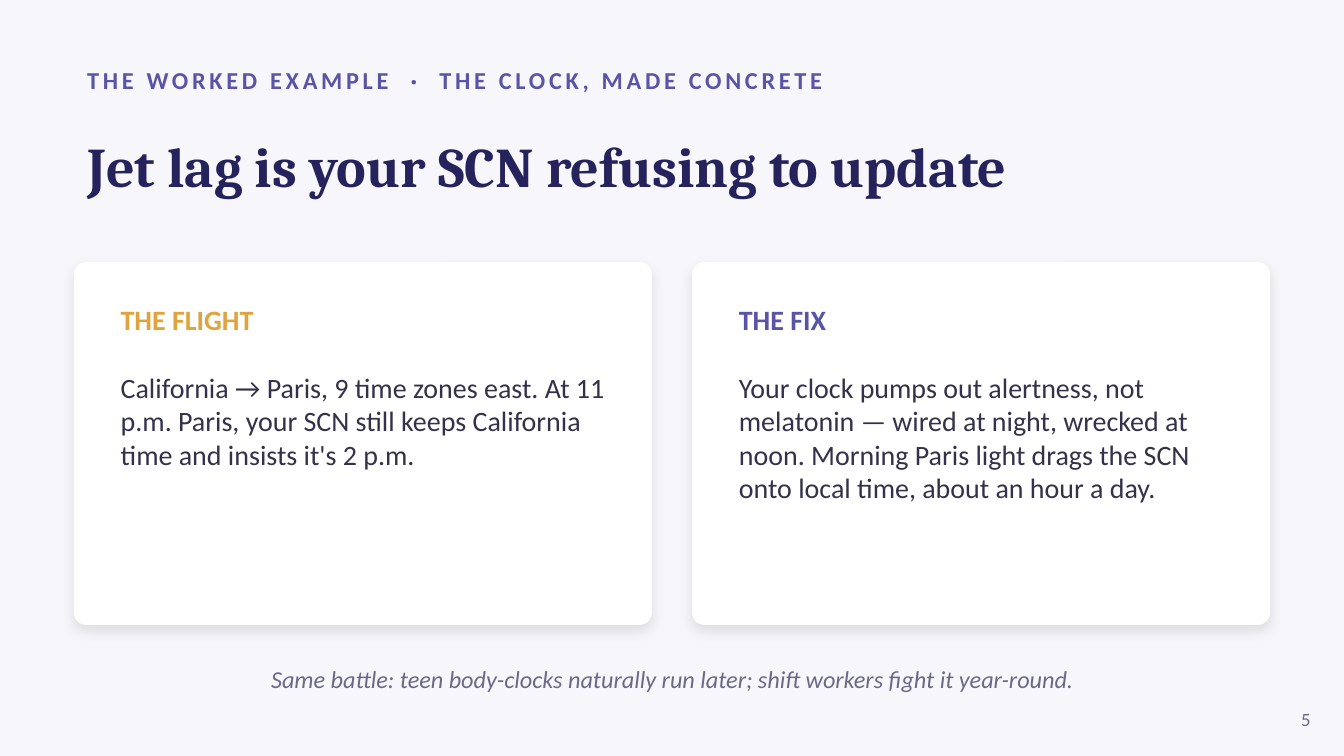
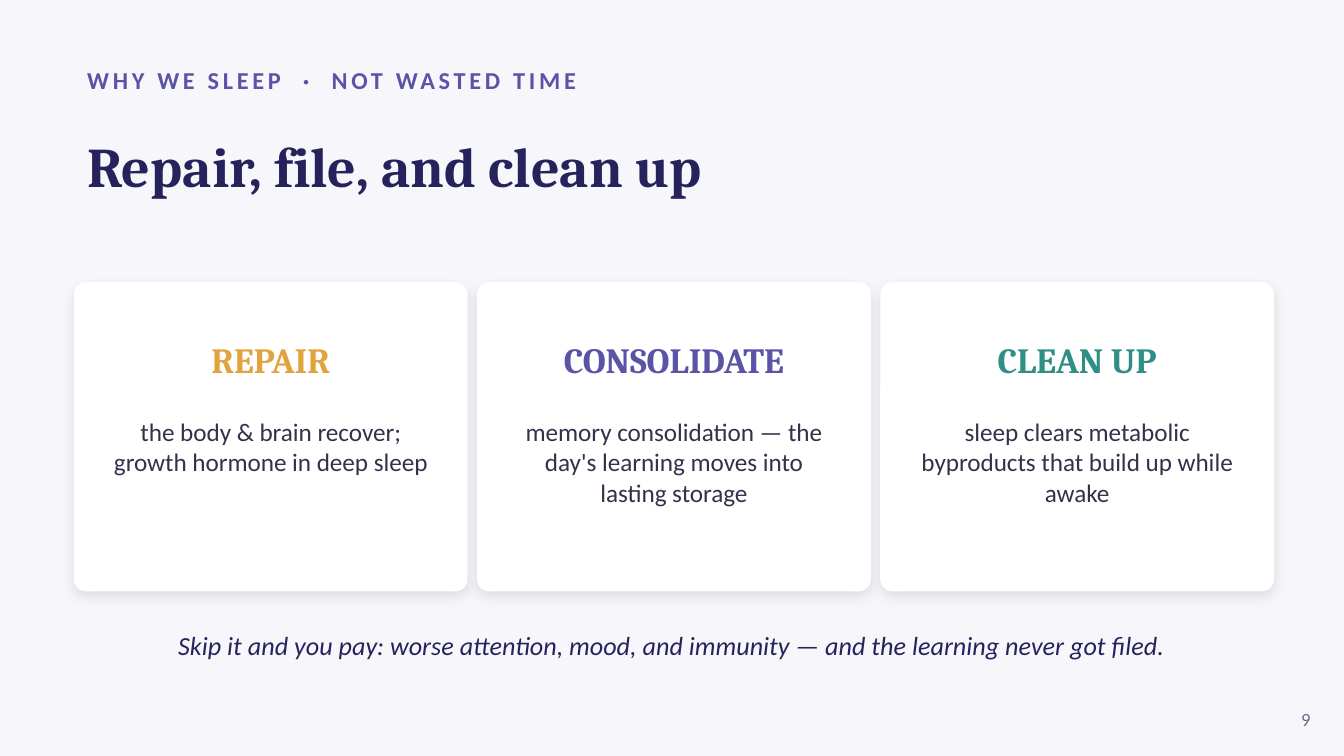
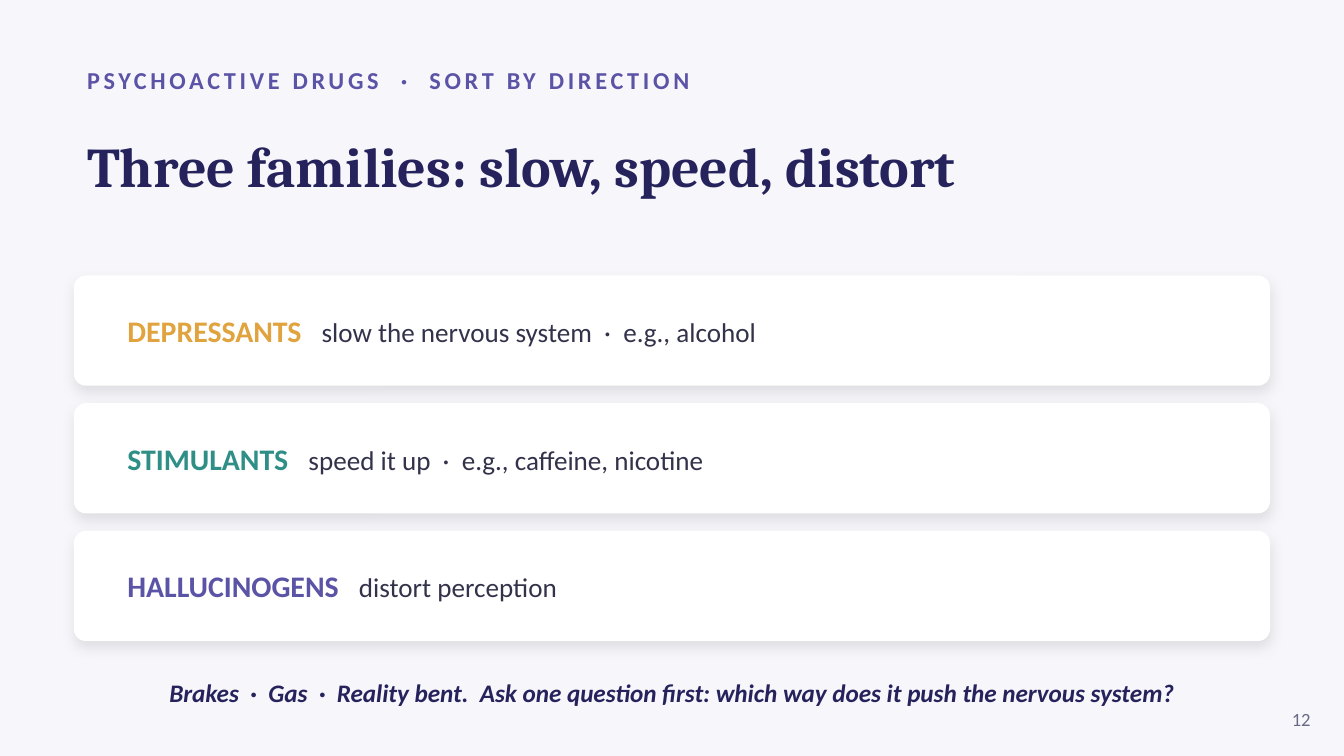
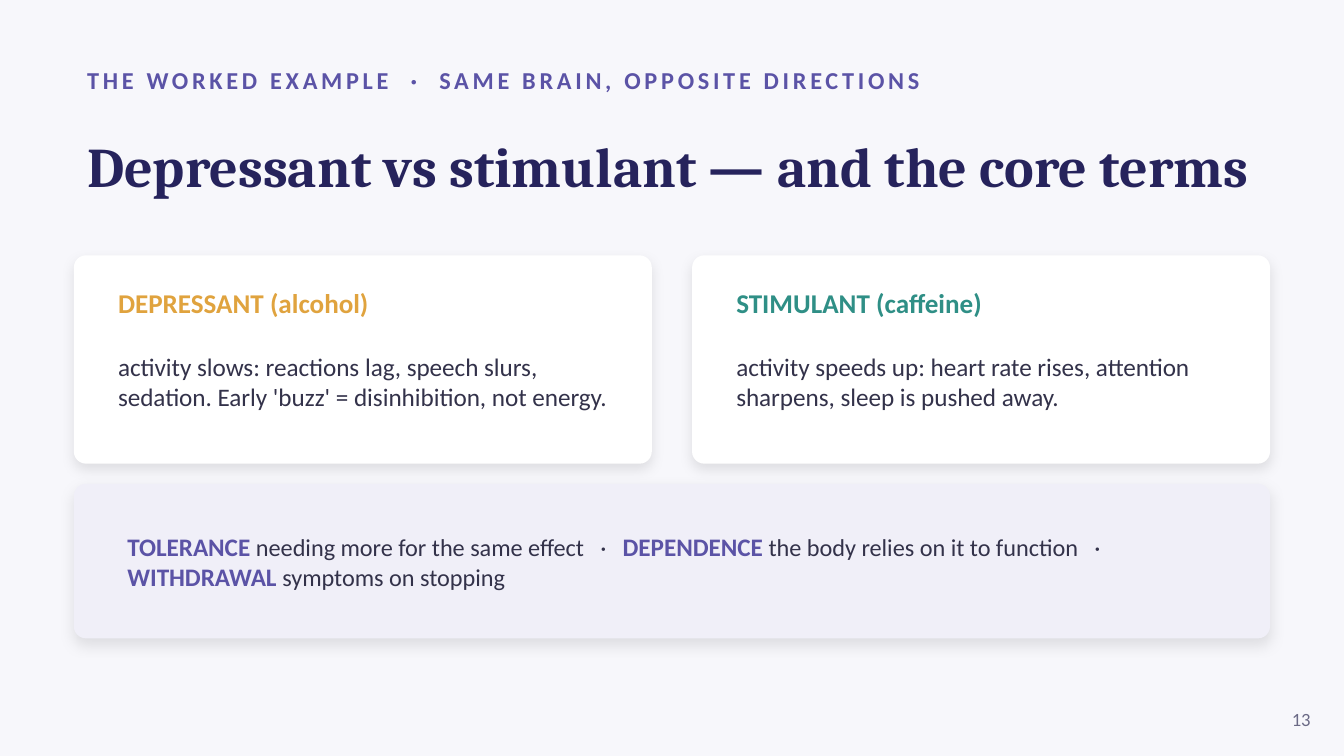
"""Build four slides on sleep, body clocks and psychoactive drugs."""
from lxml.etree import SubElement
from pptx import Presentation
from pptx.dml.color import RGBColor
from pptx.enum.shapes import MSO_SHAPE as Shape
from pptx.enum.text import MSO_ANCHOR as Anchor, PP_ALIGN as Align
from pptx.oxml.ns import qn
from pptx.util import Pt

PAPER = RGBColor(0xF7, 0xF7, 0xFB)
WHITE = RGBColor(0xFF, 0xFF, 0xFF)
LAVENDER = RGBColor(0xF0, 0xEF, 0xF8)
NAVY = RGBColor(0x26, 0x23, 0x5C)
INK = RGBColor(0x33, 0x32, 0x4A)
MUTED = RGBColor(0x6B, 0x6A, 0x86)
VIOLET = RGBColor(0x5B, 0x53, 0xA6)
AMBER = RGBColor(0xE0, 0xA3, 0x3E)
TEAL = RGBColor(0x2F, 0x8F, 0x86)

SANS, SERIF = "Calibri", "Cambria"
LEFT, WIDTH = 39.6, 640.8
HALF_WIDTH, HALF_STEP = 309.6, 331.2
THIRD_WIDTH, THIRD_STEP = 210.96, 216
RADIUS = 6.48
LINE_HEIGHT = 1.22


def write(paragraph, text, size=13.5, color=INK, font=SANS, bold=False, italic=False, tracking=0):
    """Append one formatted run to a paragraph."""
    run = paragraph.add_run()
    run.text = text
    run.font.name = font
    run.font.size = Pt(size)
    run.font.color.rgb = color
    run.font.bold = bold
    run.font.italic = italic
    if tracking:
        run.font._element.set("spc", str(tracking * 100))


class Deck:
    """Hold the shared style and the current slide."""

    def __init__(self):
        self.presentation = Presentation()
        self.presentation.slide_width = Pt(720)
        self.presentation.slide_height = Pt(405)
        self.slide = None

    def start_slide(self, number, kicker, title):
        self.slide = self.presentation.slides.add_slide(self.presentation.slide_layouts[6])
        self.slide.background.fill.solid()
        self.slide.background.fill.fore_color.rgb = PAPER
        self.line(LEFT, 30.24, 648, 25.2, kicker, size=13, color=VIOLET, bold=True, tracking=2)
        self.line(LEFT, 56.16, WIDTH, 64.8, title, size=30, color=NAVY, font=SERIF, bold=True)
        self.line(673.2, 374.4, 36, 21.6, str(number), Align.RIGHT, size=10, color=MUTED)

    def text_box(self, left, top, width, height, anchor=Anchor.MIDDLE):
        box = self.slide.shapes.add_textbox(Pt(left), Pt(top), Pt(width), Pt(height))
        frame = box.text_frame
        frame.word_wrap = True
        frame.vertical_anchor = anchor
        return frame

    def line(self, left, top, width, height, text, align=Align.LEFT, anchor=Anchor.MIDDLE, **style):
        paragraph = self.text_box(left, top, width, height, anchor).paragraphs[0]
        paragraph.alignment = align
        write(paragraph, text, **style)

    def closing(self, top, text, **style):
        self.line(LEFT, top, WIDTH, 28.8, text, Align.CENTER, italic=True, **style)

    def headed_text(self, left, top, width, height, heading, body, color, heading_size, body_size):
        frame = self.text_box(left, top, width, height, Anchor.TOP)
        write(frame.paragraphs[0], heading, size=heading_size, color=color, bold=True)
        frame.paragraphs[0].space_after = Pt(round(heading_size * LINE_HEIGHT, 1))
        write(frame.add_paragraph(), body, size=body_size)

    def labelled_row(self, left, top, width, height, label, body, color, tab):
        paragraph = self.text_box(left, top, width, height).paragraphs[0]
        tabs = SubElement(paragraph._p.get_or_add_pPr(), qn("a:tabLst"))
        SubElement(tabs, qn("a:tab"), pos=str(Pt(tab)), algn="l")
        write(paragraph, label + "\t", size=16, color=color, bold=True)
        write(paragraph, body, size=14.5)

    def card(self, left, top, width, height, fill=WHITE):
        card = self.slide.shapes.add_shape(
            Shape.ROUNDED_RECTANGLE, Pt(left), Pt(top), Pt(width), Pt(height))
        card.adjustments[0] = RADIUS / height
        card.fill.solid()
        card.fill.fore_color.rgb = fill
        card.line.fill.background()
        card.shadow.inherit = False
        effects = card._element.spPr.find(qn("a:effectLst"))
        shadow = SubElement(effects, qn("a:outerShdw"), blurRad=str(Pt(7)), dist=str(Pt(3)),
                            dir="5400000", algn="bl", rotWithShape="0")
        black = SubElement(shadow, qn("a:srgbClr"), val="000000")
        SubElement(black, qn("a:alpha"), val="10000")


def jet_lag_slide(deck):
    """Show the flight and the fix side by side."""
    deck.start_slide(5, "THE WORKED EXAMPLE  ·  THE CLOCK, MADE CONCRETE",
                     "Jet lag is your SCN refusing to update")
    columns = [
        ("THE FLIGHT", AMBER, "California → Paris, 9 time zones east. At 11 p.m. Paris, your SCN "
         "still keeps California time and insists it's 2 p.m."),
        ("THE FIX", VIOLET, "Your clock pumps out alertness, not melatonin — wired at night, "
         "wrecked at noon. Morning Paris light drags the SCN onto local time, about an hour a day."),
    ]
    for index, (heading, color, body) in enumerate(columns):
        left = LEFT + index * HALF_STEP
        deck.card(left, 140.4, HALF_WIDTH, 194.4)
        deck.headed_text(left + 18, 158.4, 273.6, 165.6, heading, body, color, 15, 15)
    deck.closing(349.2, "Same battle: teen body-clocks naturally run later; "
                 "shift workers fight it year-round.", size=13, color=MUTED)


def why_sleep_slide(deck):
    """Show three reasons to sleep."""
    deck.start_slide(9, "WHY WE SLEEP  ·  NOT WASTED TIME", "Repair, file, and clean up")
    reasons = [
        ("REPAIR", AMBER, "the body & brain recover; growth hormone in deep sleep"),
        ("CONSOLIDATE", VIOLET,
         "memory consolidation — the day's learning moves into lasting storage"),
        ("CLEAN UP", TEAL, "sleep clears metabolic byproducts that build up while awake"),
    ]
    for index, (heading, color, body) in enumerate(reasons):
        left = LEFT + index * THIRD_STEP
        deck.card(left, 151.2, THIRD_WIDTH, 165.6)
        deck.line(left, 172.8, THIRD_WIDTH, 39.6, heading, Align.CENTER,
                  size=19, color=color, font=SERIF, bold=True)
        deck.line(left + 14.4, 219.6, THIRD_WIDTH - 28.8, 86.4, body, Align.CENTER, Anchor.TOP)
    deck.closing(331.2, "Skip it and you pay: worse attention, mood, and immunity — "
                 "and the learning never got filed.", size=14, color=NAVY)


def drug_families_slide(deck):
    """Show the three drug families as rows."""
    deck.start_slide(12, "PSYCHOACTIVE DRUGS  ·  SORT BY DIRECTION",
                     "Three families: slow, speed, distort")
    families = [
        ("DEPRESSANTS", AMBER, "slow the nervous system  ·  e.g., alcohol", 104),
        ("STIMULANTS", TEAL, "speed it up  ·  e.g., caffeine, nicotine", 97),
        ("HALLUCINOGENS", VIOLET, "distort perception", 124),
    ]
    for index, (label, color, body, tab) in enumerate(families):
        top = 147.6 + index * 68.4
        deck.card(LEFT, top, WIDTH, 59.04)
        deck.labelled_row(LEFT + 21.6, top + 4.32, 597.6, 50.4, label, body, color, tab)
    deck.closing(356.4, "Brakes  ·  Gas  ·  Reality bent.  Ask one question first: "
                 "which way does it push the nervous system?", color=NAVY, bold=True)


def core_terms_slide(deck):
    """Compare two drugs and define the core terms."""
    deck.start_slide(13, "THE WORKED EXAMPLE  ·  SAME BRAIN, OPPOSITE DIRECTIONS",
                     "Depressant vs stimulant — and the core terms")
    drugs = [
        ("DEPRESSANT (alcohol)", AMBER, "activity slows: reactions lag, speech slurs, sedation. "
         "Early 'buzz' = disinhibition, not energy."),
        ("STIMULANT (caffeine)", TEAL,
         "activity speeds up: heart rate rises, attention sharpens, sleep is pushed away."),
    ]
    for index, (heading, color, body) in enumerate(drugs):
        left = LEFT + index * HALF_STEP
        deck.card(left, 136.8, HALF_WIDTH, 111.6)
        deck.headed_text(left + 16.56, 149.76, 277.2, 93.6, heading, body, color, 14.5, 13.5)

    deck.card(LEFT, 259.2, WIDTH, 82.8, LAVENDER)
    paragraph = deck.text_box(LEFT + 21.6, 272.16, 597.6, 57.6).paragraphs[0]
    terms = [
        ("TOLERANCE ", "needing more for the same effect   ·   "),
        ("DEPENDENCE ", "the body relies on it to function   ·   "),
        ("WITHDRAWAL ", "symptoms on stopping"),
    ]
    for term, meaning in terms:
        write(paragraph, term, color=VIOLET, bold=True)
        write(paragraph, meaning, size=13)


def main():
    """Build every slide and save the file."""
    deck = Deck()
    for build in (jet_lag_slide, why_sleep_slide, drug_families_slide, core_terms_slide):
        build(deck)
    deck.presentation.save("out.pptx")


if __name__ == "__main__":
    main()
